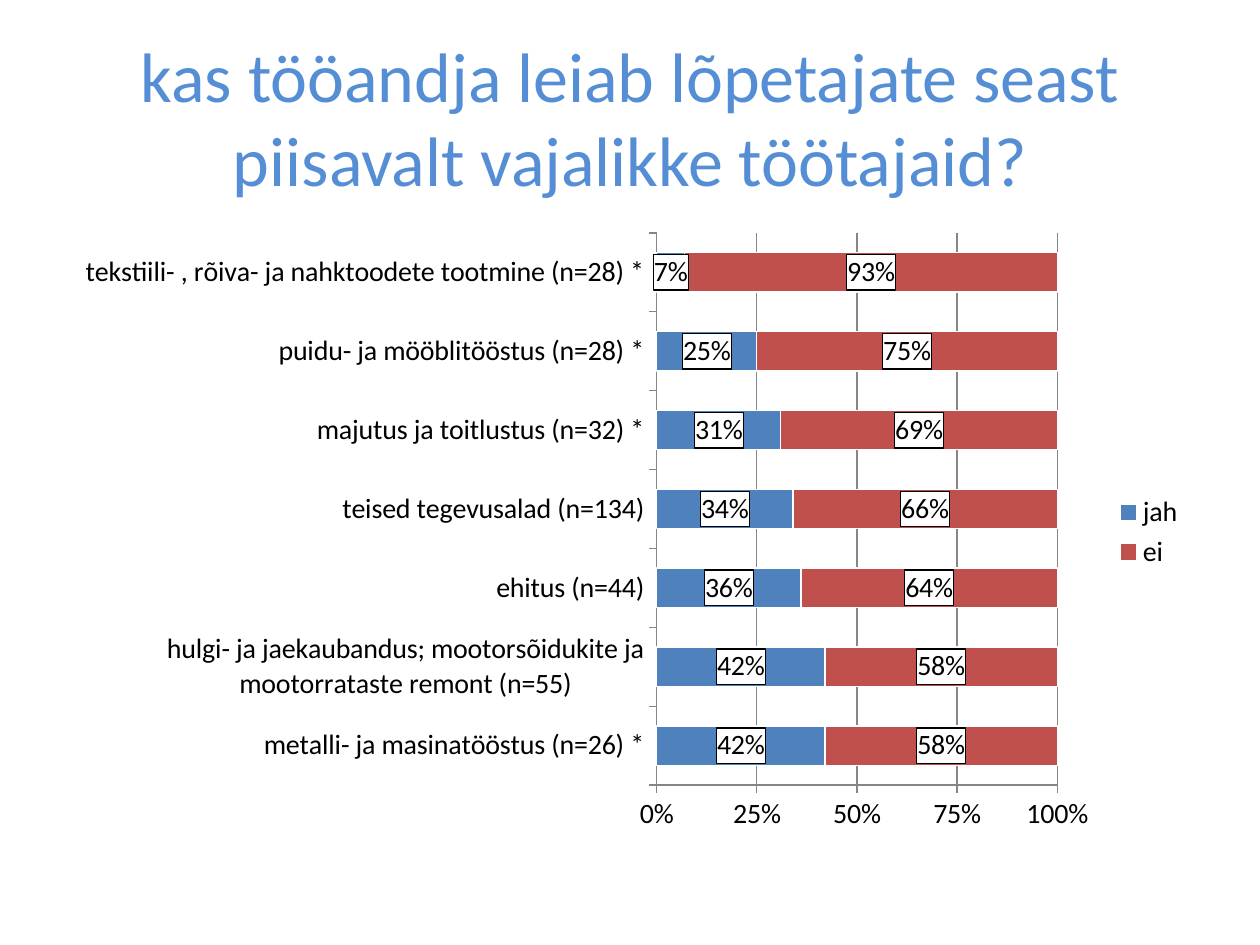
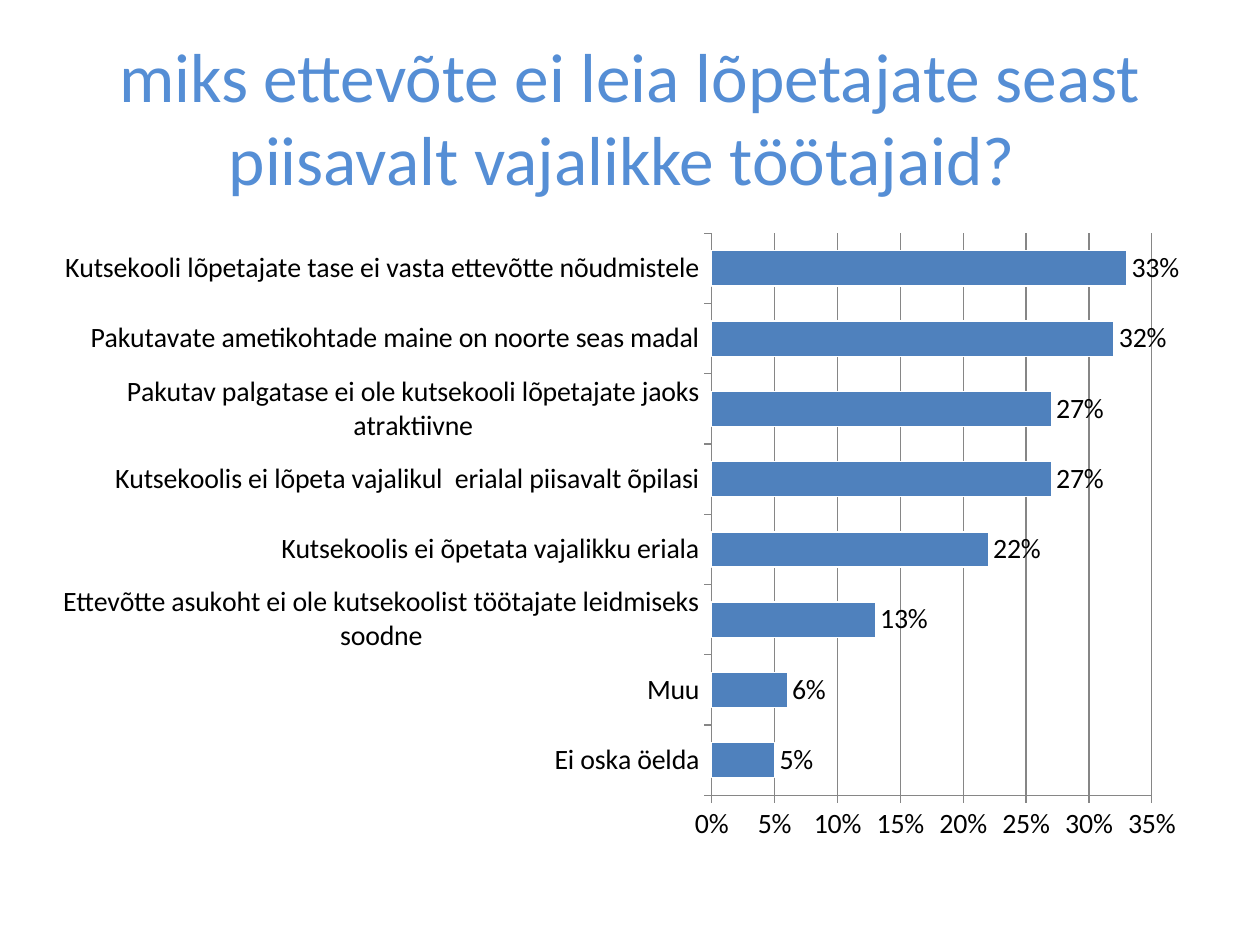
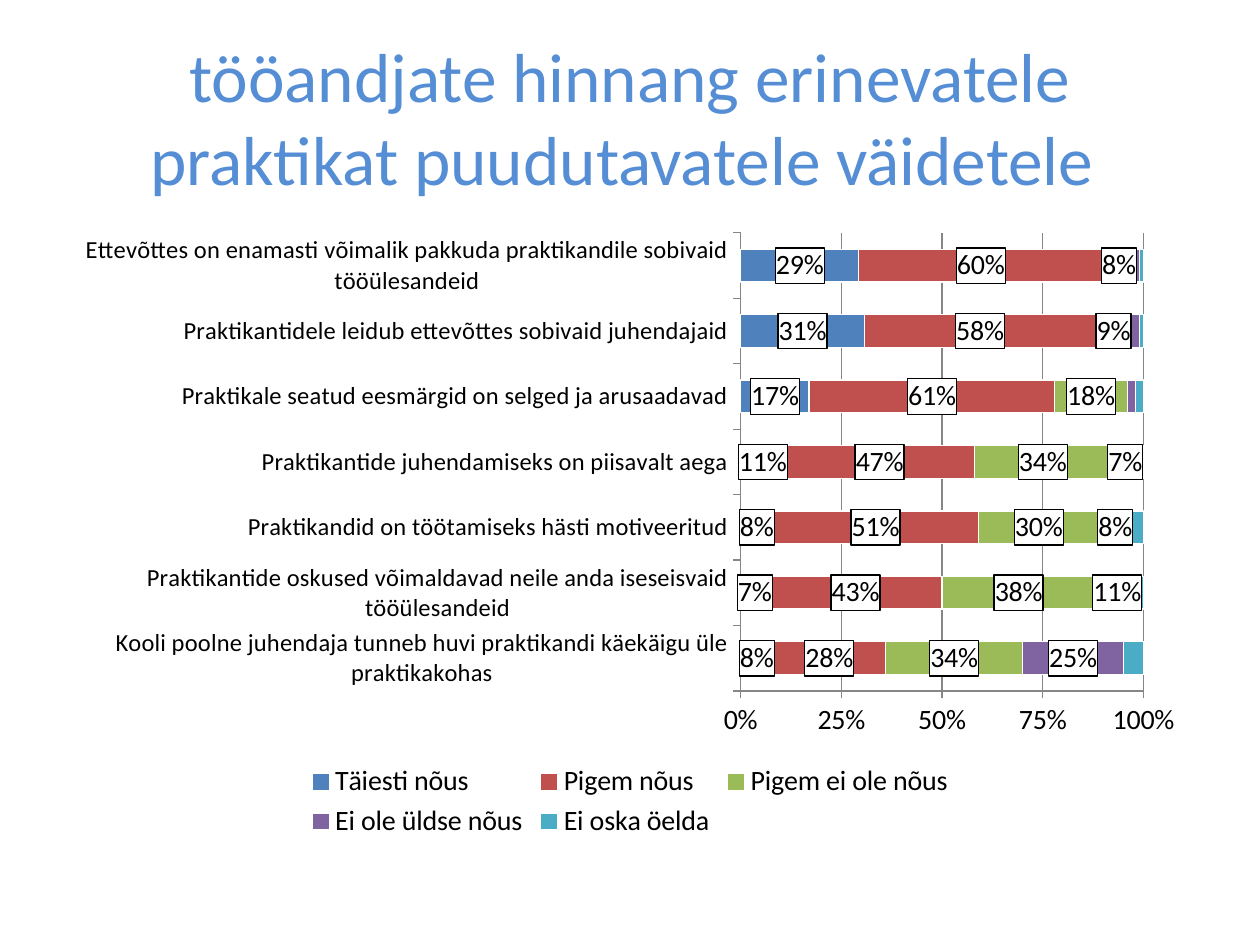
from lxml import etree
from pptx import Presentation
from pptx import util as u
from pptx.chart.data import CategoryChartData
from pptx.dml.color import RGBColor
from pptx.enum import chart as ch, text
from pptx.oxml import parse_xml
from pptx.oxml.ns import nsdecls, qn

FONT = "Calibri"
TITLE = RGBColor(0x55, 0x8E, 0xD5)
BLACK = RGBColor(0, 0, 0)
WHITE = RGBColor(0xFF, 0xFF, 0xFF)
GREY = RGBColor(0x86, 0x86, 0x86)
BLUE = RGBColor(0x4F, 0x81, 0xBD)
RED = RGBColor(0xC0, 0x50, 0x4D)
GREEN = RGBColor(0x9B, 0xBB, 0x59)
PURPLE = RGBColor(0x80, 0x64, 0xA2)
TEAL = RGBColor(0x4B, 0xAC, 0xC6)
COLOURS = [BLUE, RED, GREEN, PURPLE, TEAL]

STACKED = ch.XL_CHART_TYPE.BAR_STACKED_100
CLUSTERED = ch.XL_CHART_TYPE.BAR_CLUSTERED
PLOT_BOX = {"xMode": "edge", "yMode": "edge", "x": 0.57, "y": 0.02, "w": 0.39, "h": 0.88}

SLIDES = [
    dict(
        title="kas tööandja leiab lõpetajate seast piisavalt vajalikke töötajaid?",
        size=40, kind=STACKED, height=4.95, step=0.25, top=1, cat_size=16,
        legend=ch.XL_LEGEND_POSITION.RIGHT, hidden={}, labelled=2,
        cats=[
            "metalli- ja masinatööstus (n=26) *",
            "hulgi- ja jaekaubandus; mootorsõidukite ja mootorrataste remont (n=55)",
            "ehitus (n=44)",
            "teised tegevusalad (n=134)",
            "majutus ja toitlustus (n=32) *",
            "puidu- ja mööblitööstus (n=28) *",
            "tekstiili- , rõiva- ja nahktoodete tootmine (n=28) *",
        ],
        series={
            "jah": [0.42, 0.42, 0.36, 0.34, 0.31, 0.25, 0.07],
            "ei": [0.58, 0.58, 0.64, 0.66, 0.69, 0.75, 0.93],
        },
    ),
    dict(
        title="miks ettevõte ei leia lõpetajate seast piisavalt vajalikke töötajaid? ",
        size=39.6, kind=CLUSTERED, height=5.07, step=0.05, top=0.35, cat_size=16,
        legend=None, hidden={}, labelled=1,
        cats=[
            "Ei oska öelda",
            "Muu",
            "Ettevõtte asukoht ei ole kutsekoolist töötajate leidmiseks soodne",
            "Kutsekoolis ei õpetata vajalikku eriala",
            "Kutsekoolis ei lõpeta vajalikul  erialal piisavalt õpilasi",
            "Pakutav palgatase ei ole kutsekooli lõpetajate jaoks atraktiivne",
            "Pakutavate ametikohtade maine on noorte seas madal",
            "Kutsekooli lõpetajate tase ei vasta ettevõtte nõudmistele",
        ],
        series={"Series 1": [0.05, 0.06, 0.13, 0.22, 0.27, 0.27, 0.32, 0.33]},
    ),
    dict(
        title="tööandjate hinnang erinevatele praktikat puudutavatele väidetele ",
        size=39.6, kind=STACKED, height=4.95, step=0.25, top=1, cat_size=14,
        legend=ch.XL_LEGEND_POSITION.BOTTOM,
        hidden={"Ei ole üldse nõus": [4, 5, 6]}, labelled=4,
        cats=[
            "Kooli poolne juhendaja tunneb huvi praktikandi käekäigu üle praktikakohas",
            "Praktikantide oskused võimaldavad neile anda iseseisvaid tööülesandeid",
            "Praktikandid on töötamiseks hästi motiveeritud",
            "Praktikantide juhendamiseks on piisavalt aega",
            "Praktikale seatud eesmärgid on selged ja arusaadavad",
            "Praktikantidele leidub ettevõttes sobivaid juhendajaid",
            "Ettevõttes on enamasti võimalik pakkuda praktikandile sobivaid tööülesandeid",
        ],
        series={
            "Täiesti nõus": [0.08, 0.07, 0.08, 0.11, 0.17, 0.31, 0.29],
            "Pigem nõus": [0.28, 0.43, 0.51, 0.47, 0.61, 0.58, 0.6],
            "Pigem ei ole nõus": [0.34, 0.38, 0.3, 0.34, 0.18, 0.09, 0.08],
            "Ei ole üldse nõus": [0.25, 0.11, 0.08, 0.07, 0.02, 0.02, 0.01],
            "Ei oska öelda": [0.05, 0.01, 0.03, 0.01, 0.02, 0.01, 0.01],
        },
    ),
]


def set_font(font, size, colour):
    font.name = FONT
    font.size = u.Pt(size)
    font.color.rgb = colour


def add_labels(series, stacked, hidden):
    labels = series.data_labels
    labels.show_value = True
    labels.number_format = "0%"
    labels.number_format_is_linked = False
    pos = ch.XL_LABEL_POSITION
    labels.position = pos.CENTER if stacked else pos.OUTSIDE_END
    set_font(labels.font, 16, BLACK)
    el = labels._element
    if stacked:
        el.find(qn("c:txPr")).addprevious(parse_xml(
            f'<c:spPr {nsdecls("c", "a")}>'
            f'<a:solidFill><a:srgbClr val="{WHITE}"/></a:solidFill>'
            f'<a:ln w="9525"><a:solidFill><a:srgbClr val="{BLACK}"/></a:solidFill></a:ln>'
            '</c:spPr>'))
    for i, point in enumerate(hidden):
        el.insert(i, parse_xml(
            f'<c:dLbl {nsdecls("c")}><c:idx val="{point}"/><c:delete val="1"/></c:dLbl>'))


prs = Presentation()
prs.slide_width, prs.slide_height = u.Inches(10), u.Inches(7.5)
W, H = prs.slide_width, prs.slide_height
LEFT, WIDTH = int(W * 0.05), int(W * 0.9)

for d in SLIDES:
    s = prs.slides.add_slide(prs.slide_layouts[6])
    tf = s.shapes.add_textbox(LEFT, int(H * 0.04), WIDTH, u.Inches(1.25)).text_frame
    tf.word_wrap = True
    tf.vertical_anchor = text.MSO_ANCHOR.MIDDLE
    p = tf.paragraphs[0]
    p.alignment = text.PP_ALIGN.CENTER
    r = p.add_run()
    r.text = d["title"]
    set_font(r.font, d["size"], TITLE)

    data = CategoryChartData(number_format="0%")
    data.categories = d["cats"]
    for name, values in d["series"].items():
        data.add_series(name, values)
    chart = s.shapes.add_chart(
        d["kind"], LEFT, u.Inches(1.75), WIDTH, u.Inches(d["height"]), data).chart
    stacked = d["kind"] == STACKED
    set_font(chart.font, 16, BLACK)
    chart.has_title = False
    chart.has_legend = d["legend"] is not None
    if chart.has_legend:
        chart.legend.position = d["legend"]
        chart.legend.include_in_layout = False
        set_font(chart.legend.font, 16, BLACK)

    plot = chart.plots[0]
    plot.vary_by_categories = False
    plot.gap_width = 100
    if stacked:
        plot.overlap = 100
    for i, series in enumerate(plot.series):
        series.format.fill.solid()
        series.format.fill.fore_color.rgb = COLOURS[i]
        series.format.line.color.rgb = WHITE
        series.format.line.width = u.Pt(0.75)
        if i < d["labelled"]:
            add_labels(series, stacked, d["hidden"].get(series.name, []))

    cat, val = chart.category_axis, chart.value_axis
    for axis, size in ((cat, d["cat_size"]), (val, 16)):
        axis.major_tick_mark = ch.XL_TICK_MARK.OUTSIDE
        axis.minor_tick_mark = ch.XL_TICK_MARK.NONE
        axis.format.line.color.rgb = GREY
        axis.format.line.width = u.Pt(0.75)
        set_font(axis.tick_labels.font, size, BLACK)
    cat.has_major_gridlines = False
    val.has_major_gridlines = True
    val.major_gridlines.format.line.color.rgb = GREY
    val.major_gridlines.format.line.width = u.Pt(0.75)
    val.minimum_scale, val.maximum_scale = 0, d["top"]
    val.major_unit = d["step"]
    val.tick_labels.number_format = "0%"
    val.tick_labels.number_format_is_linked = False

    if not stacked:
        area = chart._chartSpace.chart.plotArea
        for old in area.findall(qn("c:layout")):
            area.remove(old)
        layout = parse_xml(f'<c:layout {nsdecls("c")}><c:manualLayout>'
                           '<c:layoutTarget val="inner"/></c:manualLayout></c:layout>')
        for tag, value in PLOT_BOX.items():
            etree.SubElement(layout[0], qn(f"c:{tag}")).set("val", str(value))
        area.insert(0, layout)

prs.save("out.pptx")
